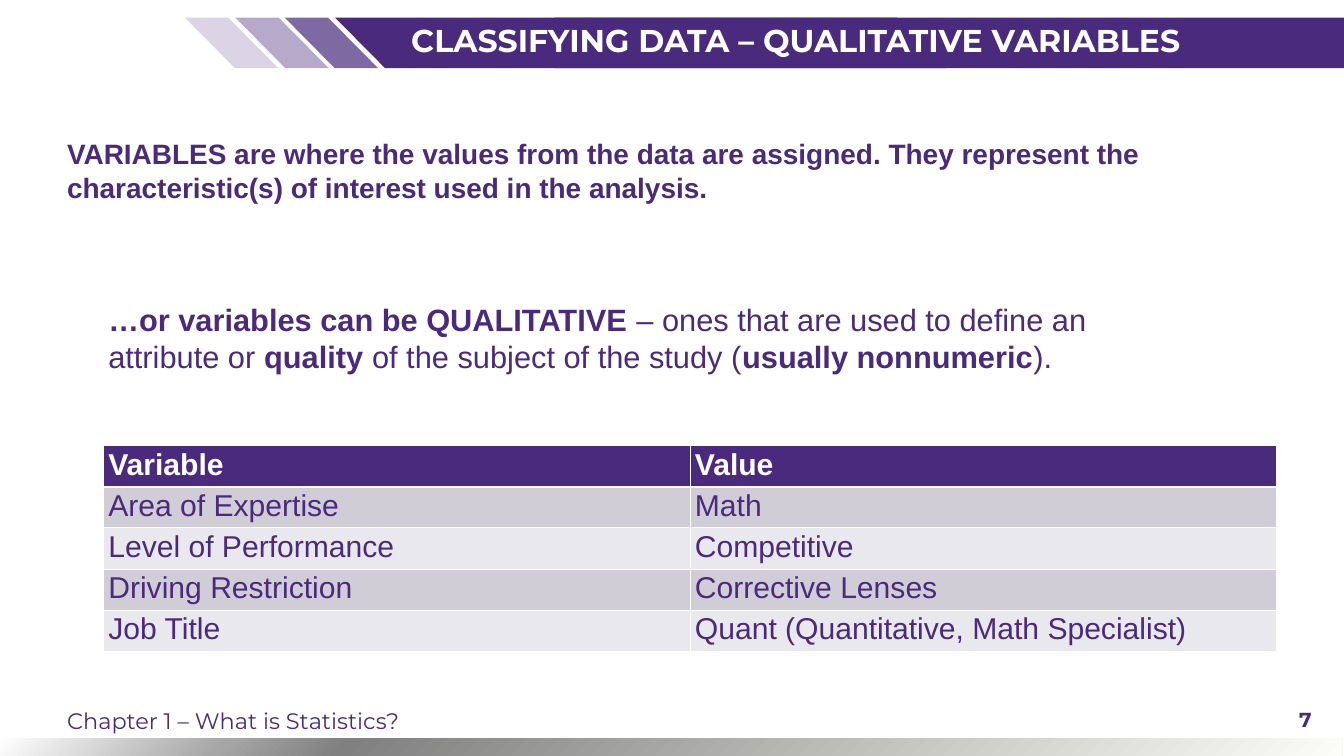
from pptx import Presentation
from pptx.dml.color import RGBColor
from pptx.enum import shapes, text
from pptx.oxml import parse_xml
from pptx.oxml.ns import nsdecls, qn
from pptx.util import Inches, Pt
from lxml import etree

COLORS = {"purple": "4A2A7C", "white": "FFFFFF", "band_dark": "D0CDD7", "band_light": "E9E8EC"}
FOOTER_STOPS = [(0, "FCFDF6"), (74, "808080"), (83, "A6A6A6"), (100, "FFFFFF")]
ROWS = [
    ("Variable", "Value"),
    ("Area of Expertise", "Math"),
    ("Level of Performance", "Competitive"),
    ("Driving Restriction", "Corrective Lenses"),
    ("Job Title", "Quant (Quantitative, Math Specialist)"),
]


def rgb(name):
    return RGBColor.from_string(COLORS[name])


def add_block(slide, kind, box, opacity=100):
    """Add a purple shape without outline or shadow; opacity is in percent."""
    shape = slide.shapes.add_shape(kind, *map(Inches, box))
    shape.shadow.inherit = False
    shape.line.fill.background()
    shape.fill.solid()
    shape.fill.fore_color.rgb = rgb("purple")
    if opacity < 100:
        color = shape.element.spPr.find(qn("a:solidFill"))[0]
        etree.SubElement(color, qn("a:alpha")).set("val", str(opacity * 1000))
    return shape


def add_runs(paragraph, runs, size, font="Arial", color="purple"):
    """Add (wording, bold) pairs as runs."""
    for wording, bold in runs:
        run = paragraph.add_run()
        run.text = wording
        run.font.name = font
        run.font.size = Pt(size)
        run.font.bold = bold
        run.font.color.rgb = rgb(color)


def fill_text(shape, runs, size, font="Arial", color="purple", inset=(0.24, 0.12),
              anchor=text.MSO_ANCHOR.TOP, align=text.PP_ALIGN.LEFT):
    frame = shape.text_frame
    frame.word_wrap = True
    frame.auto_size = text.MSO_AUTO_SIZE.NONE
    frame.vertical_anchor = anchor
    frame.margin_left = frame.margin_right = Inches(inset[0])
    frame.margin_top = frame.margin_bottom = Inches(inset[1])
    paragraph = frame.paragraphs[0]
    paragraph.alignment = align
    add_runs(paragraph, runs, size, font, color)


def add_text(slide, box, runs, size, **options):
    fill_text(slide.shapes.add_textbox(*map(Inches, box)), runs, size, **options)


def add_header(slide, left, top, width, height):
    """Slanted stripes fading to the left of a solid band that carries the title."""
    stripes = [(2.98, 12.14, 100), (1.98, 1.85, 70), (1, 1.85, 40), (0, 1.85, 20)]
    for offset, stripe_width, opacity in stripes:
        stripe = add_block(slide, shapes.MSO_SHAPE.PARALLELOGRAM,
                           (left + offset, top, stripe_width, height), opacity)
        stripe.adjustments[0] = 0.99
        stripe.rotation = 180
        stripe.element.spPr.xfrm.set("flipH", "1")
    add_block(slide, shapes.MSO_SHAPE.RECTANGLE, (left + 7.33, top, width - 7.33, height))

    title = slide.shapes.title
    title.left, title.top = Inches(left + 4.25), Inches(top - 0.05)
    title.width, title.height = Inches(17.92), Inches(0.95)
    fill_text(title, [("CLASSIFYING DATA – QUALITATIVE VARIABLES", True)], 45,
              font="Montserrat", color="white")
    slide.shapes._spTree.append(title.element)  # in front of the band


def add_footer(slide, left, top, width, height):
    bar = add_block(slide, shapes.MSO_SHAPE.RECTANGLE, (left, top, width, height))
    stops = "".join(f'<a:gs pos="{position * 1000}"><a:srgbClr val="{color}"/></a:gs>'
                    for position, color in FOOTER_STOPS)
    gradient = parse_xml(
        f'<a:gradFill {nsdecls("a")} rotWithShape="1"><a:gsLst>{stops}</a:gsLst>'
        '<a:path path="circle"><a:fillToRect l="100000" t="100000"/></a:path></a:gradFill>')
    properties = bar.element.spPr
    properties.replace(properties.find(qn("a:solidFill")), gradient)

    middle = text.MSO_ANCHOR.MIDDLE
    add_text(slide, (left + 1.12, top - 0.75, 19.67, 0.8),
             [("Chapter 1 – What is Statistics?", False)], 32, font="Montserrat", anchor=middle)
    add_text(slide, (left + 21.16, top - 0.77, 5.14, 0.8), [("7", True)], 29,
             font="Montserrat", anchor=middle, align=text.PP_ALIGN.RIGHT)


def set_borders(cell, top, bottom):
    """Draw white borders; top and bottom widths are in points."""
    properties = cell._tc.get_or_add_tcPr()
    for index, (side, width) in enumerate([("L", 1), ("R", 1), ("T", top), ("B", bottom)]):
        properties.insert(index, parse_xml(
            f'<a:ln{side} {nsdecls("a")} w="{Pt(width)}"><a:solidFill>'
            f'<a:srgbClr val="{COLORS["white"]}"/></a:solidFill></a:ln{side}>'))


def add_variable_table(slide, left, top, width, height):
    frame = slide.shapes.add_table(len(ROWS), len(ROWS[0]),
                                   *map(Inches, (left, top, width, height)))
    for row_index, row in enumerate(ROWS):
        header = row_index == 0
        band = "purple" if header else ("band_light", "band_dark")[row_index % 2]
        for column_index, wording in enumerate(row):
            cell = frame.table.cell(row_index, column_index)
            cell.fill.solid()
            cell.fill.fore_color.rgb = rgb(band)
            set_borders(cell, top=3 if row_index == 1 else 1, bottom=3 if header else 1)
            add_runs(cell.text_frame.paragraphs[0], [(wording, header)], 43,
                     color="white" if header else "purple")


def main():
    presentation = Presentation()
    presentation.slide_width, presentation.slide_height = Inches(26.67), Inches(15)
    slide = presentation.slides.add_slide(presentation.slide_layouts[5])
    add_header(slide, 3.67, 0.35, 23, 1)
    add_text(slide, (1.09, 2.59, 23.25, 2.29), [
        ("VARIABLES are where the values from the data are assigned. They represent the "
         "characteristic(s) of interest used in the analysis.", True)], 40)
    add_text(slide, (2.05, 5.91, 20.75, 1.64), [
        ("…or variables can be QUALITATIVE", True),
        (" – ones that are used to define an attribute or ", False),
        ("quality ", True),
        ("of the subject of the study (", False),
        ("usually nonnumeric", True),
        (").", False)], 44, inset=(0.1, 0.05))
    add_variable_table(slide, 2.05, 8.84, 23.28, 4.08)
    add_footer(slide, -0.03, 14.65, 26.67, 0.35)
    presentation.save("out.pptx")


if __name__ == "__main__":
    main()
